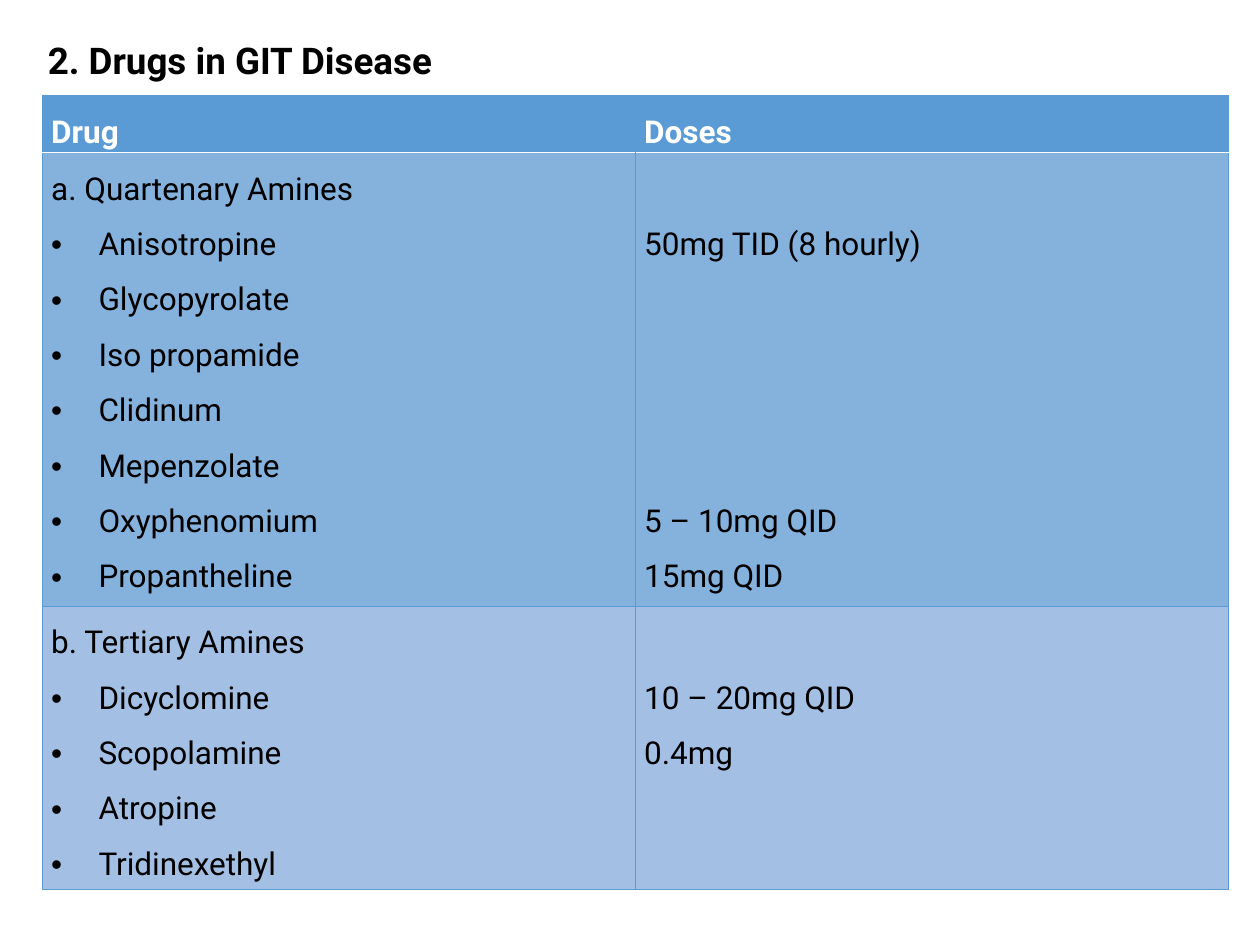
from lxml import etree
from pptx import Presentation
from pptx import util as u
from pptx.dml.color import RGBColor
from pptx.enum import text
from pptx.oxml import ns

Pt = u.Pt
BLACK = RGBColor(0x00, 0x00, 0x00)
WHITE = RGBColor(0xFF, 0xFF, 0xFF)
BLUE = RGBColor(0x5B, 0x9B, 0xD5)
MID_BLUE = RGBColor(0x85, 0xB1, 0xDD)
PALE_BLUE = RGBColor(0xA3, 0xC0, 0xE4)

LINE = 31.65  # height of one table line at 1.5 spacing
INDENT = 27

# Each group: heading, fill, drugs with their doses
GROUPS = [
    ("a. Quartenary Amines", MID_BLUE, [
        ("Anisotropine", "50mg TID (8 hourly)"),
        ("Glycopyrolate", None),
        ("Iso propamide", None),
        ("Clidinum", None),
        ("Mepenzolate", None),
        ("Oxyphenomium", "5 – 10mg QID"),
        ("Propantheline", "15mg QID"),
    ]),
    ("b. Tertiary Amines", PALE_BLUE, [
        ("Dicyclomine", "10 – 20mg QID"),
        ("Scopolamine", "0.4mg"),
        ("Atropine", None),
        ("Tridinexethyl", None),
    ]),
]


def write(frame, words, first=False, size=18, color=BLACK, bold=False,
          spacing=1.5, before=0, bullet=False):
    """Add one formatted paragraph to a text frame."""
    para = frame.paragraphs[0] if first else frame.add_paragraph()
    para.line_spacing = spacing
    para.space_before = Pt(before)
    if bullet:
        props = para._p.get_or_add_pPr()
        props.set("marL", str(Pt(INDENT)))
        props.set("indent", str(-Pt(INDENT)))
        etree.SubElement(props, ns.qn("a:buFont"), typeface="Arial")
        etree.SubElement(props, ns.qn("a:buChar"), char="•")
    span = para.add_run()
    span.text = words
    font = span.font
    font.name, font.size, font.bold = "Roboto", Pt(size), bold
    font.color.rgb = color


class Page:
    def __init__(self, deck, border=BLUE, weight=0.5):
        self.slide = deck.slides.add_slide(deck.slide_layouts[6])
        self.border, self.weight = border, weight

    def title(self, words, left, top, width, height):
        box = self.slide.shapes.add_textbox(Pt(left), Pt(top), Pt(width), Pt(height))
        box.text_frame.word_wrap = True
        write(box.text_frame, words, first=True, size=21, bold=True, spacing=0.9)

    def table(self, left, top, width, columns, heights):
        frame = self.slide.shapes.add_table(
            len(heights), columns, Pt(left), Pt(top), Pt(width), Pt(sum(heights)))
        for row, height in zip(frame.table.rows, heights):
            row.height = Pt(height)
        return frame.table

    def cell(self, cell, fill, skip=0, **edges):
        """Style a cell, leave skipped lines above its text, return its frame.

        Edges are named L, R, T, B; each is (color, weight) or None for no line.
        """
        cell.margin_left = cell.margin_right = Pt(5)
        cell.margin_top, cell.margin_bottom = Pt(skip * LINE), Pt(0)
        cell.vertical_anchor = text.MSO_ANCHOR.TOP
        cell.fill.solid()
        cell.fill.fore_color.rgb = fill
        props = cell._tc.get_or_add_tcPr()
        for place, side in enumerate("LRTB"):
            edge = edges.get(side, (self.border, self.weight))
            line = etree.Element(ns.qn(f"a:ln{side}"))
            if edge is None:
                etree.SubElement(line, ns.qn("a:noFill"))
            else:
                color, weight = edge
                line.set("w", str(Pt(weight)))
                solid = etree.SubElement(line, ns.qn("a:solidFill"))
                etree.SubElement(solid, ns.qn("a:srgbClr"), val=str(color))
            props.insert(place, line)
        return cell.text_frame


def main():
    deck = Presentation()
    deck.slide_width, deck.slide_height = Pt(720), Pt(540)
    page = Page(deck)

    # Title
    page.title("2. Drugs in GIT Disease", 20.2, 20.9, 680.4, 56.9)

    # Table header
    heights = [LINE] + [LINE * (len(drugs) + 1) for _, _, drugs in GROUPS]
    table = page.table(24.3, 54.7, 677.6, 2, heights)
    rule = (WHITE, 1)
    for column, (label, inner) in enumerate([("Drug", "R"), ("Doses", "L")]):
        frame = page.cell(table.cell(0, column), BLUE, B=rule, **{inner: None})
        write(frame, label, first=True, color=WHITE, bold=True)

    # Drug groups, each dose level with its drug
    for row, (heading, fill, drugs) in enumerate(GROUPS, start=1):
        edges = {"T": rule} if row == 1 else {}
        names = page.cell(table.cell(row, 0), fill, **edges)
        doses = page.cell(table.cell(row, 1), fill, skip=1, **edges)
        write(names, heading, first=True)
        gap = 0
        for number, (name, dose) in enumerate(drugs):
            write(names, name, bullet=True)
            if dose:
                write(doses, dose, first=number == 0, before=gap * LINE)
                gap = 0
            else:
                gap += 1

    deck.save("out.pptx")


if __name__ == "__main__":
    main()
